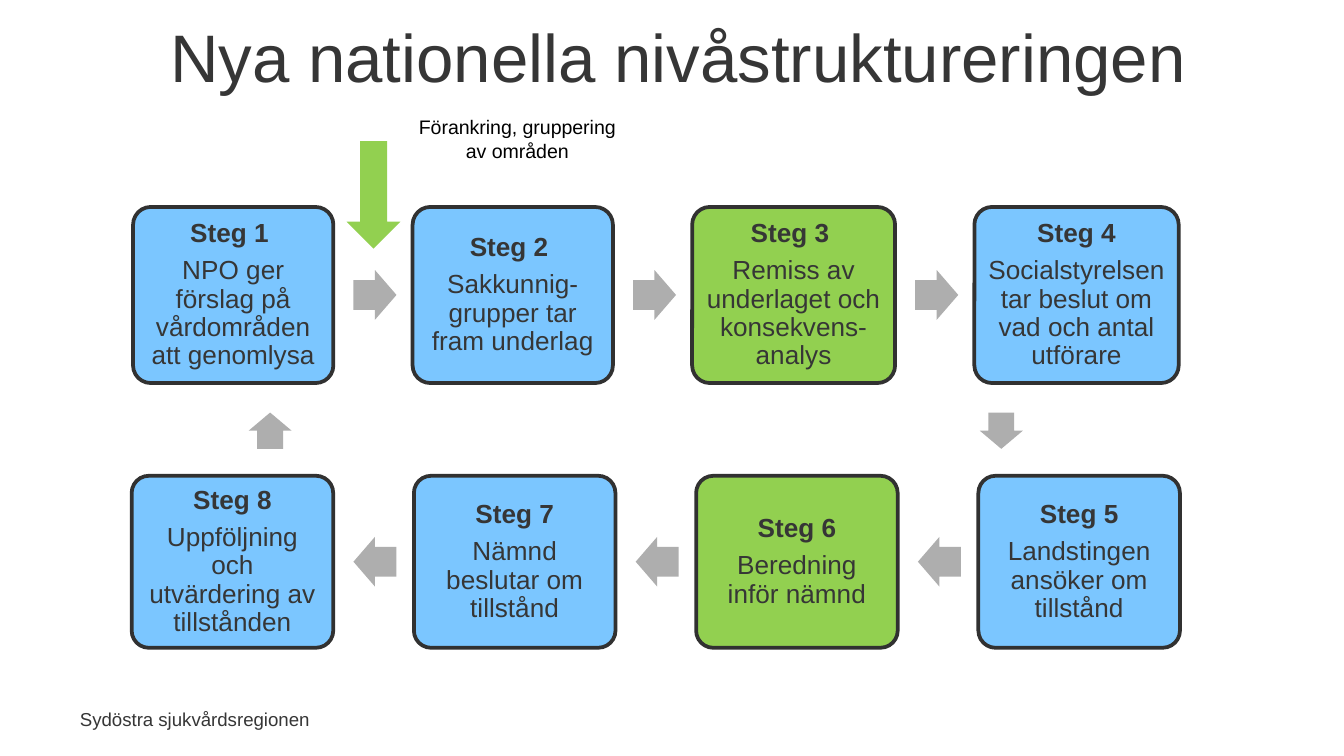
from pptx import Presentation
from pptx.dml.color import RGBColor
from pptx.enum.shapes import MSO_SHAPE as Shape
from pptx.enum.text import MSO_ANCHOR as Anchor, MSO_AUTO_SIZE as AutoSize, PP_ALIGN as Align
from pptx.util import Inches, Pt

COLORS = {"blue": "7BC6FF", "green": "92D050", "gray": "AEAEAE",
          "outline": "313131", "text": "363636", "black": "000000"}

TITLE = "Nya nationella nivåstruktureringen"
FOOTER = "Sydöstra sjukvårdsregionen"
ANCHORING = "Förankring, gruppering av områden"

# Each step: heading, description, fill, box width; listed from left to right
ROWS = [
    {"left": 0.99, "top": 1.54, "height": 1.31, "gap": 0.59, "arrow": Shape.RIGHT_ARROW, "steps": [
        ("Steg 1 ", "NPO ger förslag på vårdområden att genomlysa", "blue", 1.49),
        ("Steg 2 ", "Sakkunnig-grupper tar fram underlag", "blue", 1.49),
        ("Steg 3 ", "Remiss av underlaget och konsekvens-analys", "green", 1.51),
        ("Steg 4", "Socialstyrelsen tar beslut om vad och antal utförare", "blue", 1.52)]},
    {"left": 0.98, "top": 3.54, "height": 1.28, "gap": 0.6, "arrow": Shape.LEFT_ARROW, "steps": [
        ("Steg 8", "Uppföljning och utvärdering av tillstånden", "blue", 1.5),
        ("Steg 7", "Nämnd beslutar om tillstånd", "blue", 1.5),
        ("Steg 6", "Beredning inför nämnd", "green", 1.5),
        ("Steg 5", "Landstingen ansöker om tillstånd", "blue", 1.5)]},
]
# Arrows between the rows: preset, left
ROW_LINKS = [(Shape.DOWN_ARROW, 7.29), (Shape.UP_ARROW, 1.85)]

ARROW_OFFSET = 0.15
ARROW_WIDTH, ARROW_HEIGHT = 0.32, 0.37
BOX_INSET = 0.06


def color(name):
    return RGBColor.from_string(COLORS[name])


def add_shape(slide, preset, box, fill, adjustments=()):
    shape = slide.shapes.add_shape(preset, *map(Inches, box))
    shape.shadow.inherit = False
    shape.fill.solid()
    shape.fill.fore_color.rgb = color(fill)
    shape.line.fill.background()
    for index, value in enumerate(adjustments):
        shape.adjustments[index] = value
    return shape


def format_paragraph(paragraph, size, font_color="text", align=Align.CENTER, bold=False):
    paragraph.alignment = align
    font = paragraph.font
    font.name, font.size, font.bold = "Arial", Pt(size), bold
    font.color.rgb = color(font_color)


def add_text(slide, text, box, size, font_color, align, anchor, wrap):
    frame = slide.shapes.add_textbox(*map(Inches, box)).text_frame
    frame.word_wrap = wrap
    frame.vertical_anchor = anchor
    frame.text = text
    format_paragraph(frame.paragraphs[0], size, font_color, align)


def add_step(slide, box, heading, description, fill):
    shape = add_shape(slide, Shape.ROUNDED_RECTANGLE, box, fill, [0.1])
    shape.line.color.rgb = color("outline")
    shape.line.width = Pt(2)
    frame = shape.text_frame
    frame.word_wrap = True
    frame.vertical_anchor = Anchor.MIDDLE
    frame.margin_left = frame.margin_right = Inches(BOX_INSET)
    frame.margin_top = frame.margin_bottom = Inches(BOX_INSET)
    frame.text = f"{heading}\n{description}"
    for index, paragraph in enumerate(frame.paragraphs):
        paragraph.line_spacing = 0.9
        paragraph.space_after = Pt(5)
        format_paragraph(paragraph, 14, bold=index == 0)


def add_row(slide, row):
    left = row["left"]
    arrow_top = row["top"] + (row["height"] - ARROW_HEIGHT) / 2
    for index, (heading, description, fill, width) in enumerate(row["steps"]):
        if index:
            arrow_left = left - row["gap"] + ARROW_OFFSET
            add_shape(slide, row["arrow"], (arrow_left, arrow_top, ARROW_WIDTH, ARROW_HEIGHT),
                      "gray", [0.6, 0.5])
        add_step(slide, (left, row["top"], width, row["height"]), heading, description, fill)
        left += width + row["gap"]


def add_title(slide):
    title = slide.shapes.title
    title.left, title.top, title.width, title.height = map(Inches, (0.59, 0.15, 8.91, 0.53))
    frame = title.text_frame
    frame.text = TITLE
    frame.auto_size = AutoSize.NONE
    frame.vertical_anchor = Anchor.MIDDLE
    format_paragraph(frame.paragraphs[0], 36)


def main():
    presentation = Presentation()
    presentation.slide_width = Inches(10)
    presentation.slide_height = presentation.slide_width * 9 // 16
    slide = presentation.slides.add_slide(presentation.slide_layouts[5])
    add_title(slide)
    add_text(slide, FOOTER, (0.48, 5.22, 1.92, 0.27), 10, "text", Align.RIGHT, Anchor.TOP, False)
    for row in ROWS:
        add_row(slide, row)
    for preset, left in ROW_LINKS:
        add_shape(slide, preset, (left, 3.07, ARROW_WIDTH, 0.27), "gray", [0.6, 0.5])
    add_shape(slide, Shape.DOWN_ARROW, (2.58, 1.05, 0.4, 0.8), "green")
    add_text(slide, ANCHORING, (2.98, 0.69, 1.74, 0.68), 10.5, "black",
             Align.CENTER, Anchor.MIDDLE, True)
    presentation.save("out.pptx")


if __name__ == "__main__":
    main()
